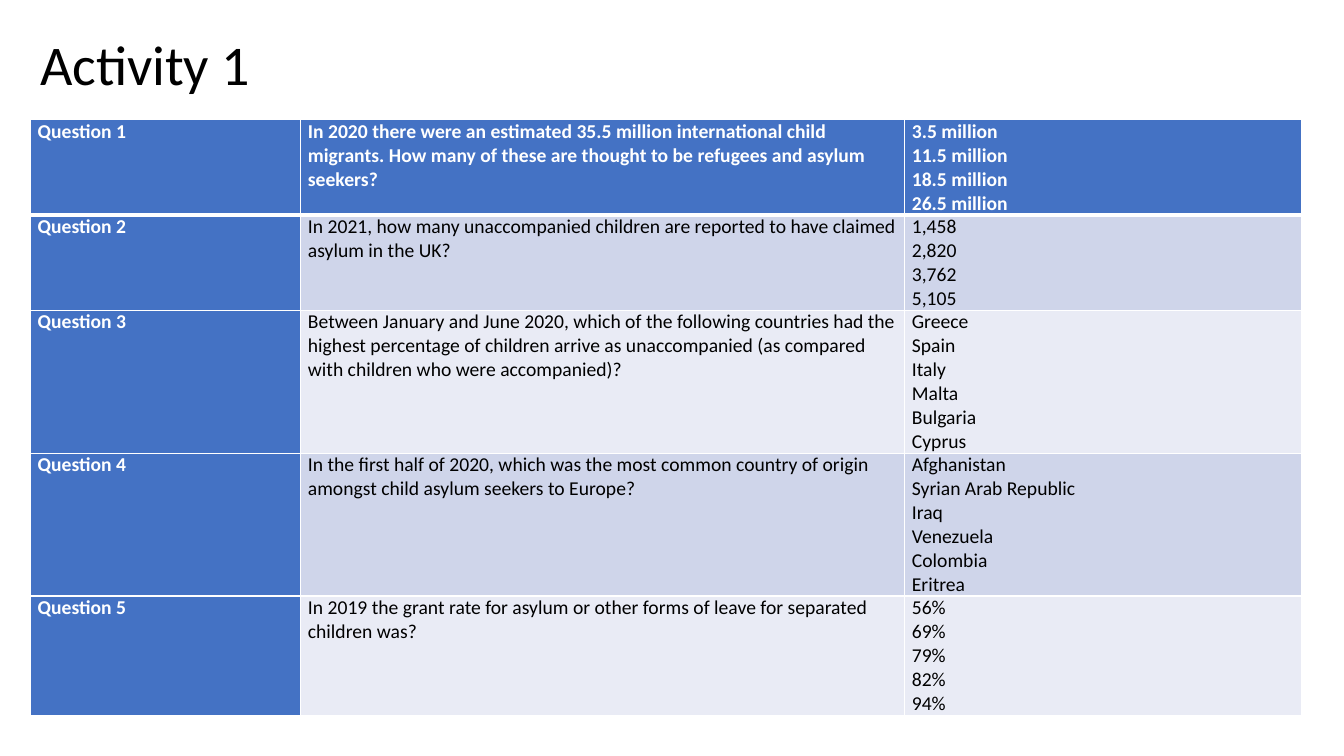
from lxml import etree
from pptx import Presentation
from pptx.dml.color import RGBColor
from pptx.enum.text import MSO_ANCHOR
from pptx.oxml.ns import qn
from pptx.util import Cm, Pt

MIDDLE = MSO_ANCHOR.MIDDLE
FONT = "Calibri"
BLUE, WHITE, BLACK = "4472C4", "FFFFFF", "000000"
BANDS = ["E9EBF5", "CFD5EA"]
LEFT = Cm(0.76)
WIDTHS = [Cm(6.81), Cm(15.22), Cm(10.01)]
LINE = Cm(0.6)

QUIZ = [
    ("In 2020 there were an estimated 35.5 million international child "
     "migrants. How many of these are thought to be refugees and asylum seekers?",
     ["3.5 million", "11.5 million", "18.5 million", "26.5 million"]),
    ("In 2021, how many unaccompanied children are reported to have claimed "
     "asylum in the UK?",
     ["1,458", "2,820", "3,762", "5,105"]),
    ("Between January and June 2020, which of the following countries had the "
     "highest percentage of children arrive as unaccompanied (as compared with "
     "children who were accompanied)?",
     ["Greece", "Spain", "Italy", "Malta", "Bulgaria", "Cyprus"]),
    ("In the first half of 2020, which was the most common country of origin "
     "amongst child asylum seekers to Europe?",
     ["Afghanistan", "Syrian Arab Republic", "Iraq", "Venezuela", "Colombia",
      "Eritrea"]),
    ("In 2019 the grant rate for asylum or other forms of leave for separated "
     "children was?",
     ["56%", "69%", "79%", "82%", "94%"]),
]


def color(code):
    return RGBColor.from_string(code)


def style(frame, size, code, bold=False):
    for para in frame.paragraphs:
        for run in para.runs:
            font = run.font
            font.name, font.size, font.bold = FONT, Pt(size), bold
            font.color.rgb = color(code)


def add_title(slide, text):
    box = slide.shapes.add_textbox(LEFT, Cm(0.76), Cm(29.21), Cm(1.88))
    frame = box.text_frame
    frame.word_wrap = True
    frame.vertical_anchor = MIDDLE
    frame.text = text
    frame.paragraphs[0].line_spacing = 0.9
    style(frame, 40, BLACK)


def add_edges(cell, top, bottom):
    """Draw white borders, placed ahead of the fill as the schema demands."""
    props = cell._tc.get_or_add_tcPr()
    edges = [("a:lnL", 1), ("a:lnR", 1), ("a:lnT", top), ("a:lnB", bottom)]
    for spot, (tag, width) in enumerate(edges):
        edge = etree.Element(qn(tag), w=str(Pt(width)))
        fill = etree.SubElement(edge, qn("a:solidFill"))
        etree.SubElement(fill, qn("a:srgbClr"), val=WHITE)
        props.insert(spot, edge)


def fill_cell(cell, text, row, col):
    strong = row == 0 or col == 0
    cell.margin_left = cell.margin_right = Cm(0.19)
    cell.margin_top = cell.margin_bottom = 0
    cell.text_frame.text = text
    style(cell.text_frame, 14, WHITE if strong else BLACK, strong)
    cell.fill.solid()
    cell.fill.fore_color.rgb = color(BLUE if strong else BANDS[row % 2])
    add_edges(cell, 3 if row == 1 else 1, 3 if row == 0 else 1)


def add_quiz(slide):
    lines = sum(len(answers) for _, answers in QUIZ)
    table = slide.shapes.add_table(len(QUIZ), len(WIDTHS), LEFT, Cm(3.02),
                                   sum(WIDTHS), LINE * lines).table
    for col, width in enumerate(WIDTHS):
        table.columns[col].width = width
    for row, (question, answers) in enumerate(QUIZ):
        table.rows[row].height = LINE * len(answers)
        texts = [f"Question {row + 1}", question, "\n".join(answers)]
        for col, text in enumerate(texts):
            fill_cell(table.cell(row, col), text, row, col)


def main():
    deck = Presentation()
    deck.slide_width, deck.slide_height = Cm(33.87), Cm(19.05)
    slide = deck.slides.add_slide(deck.slide_layouts[6])
    add_title(slide, "Activity 1")
    add_quiz(slide)
    deck.save("out.pptx")


if __name__ == "__main__":
    main()
